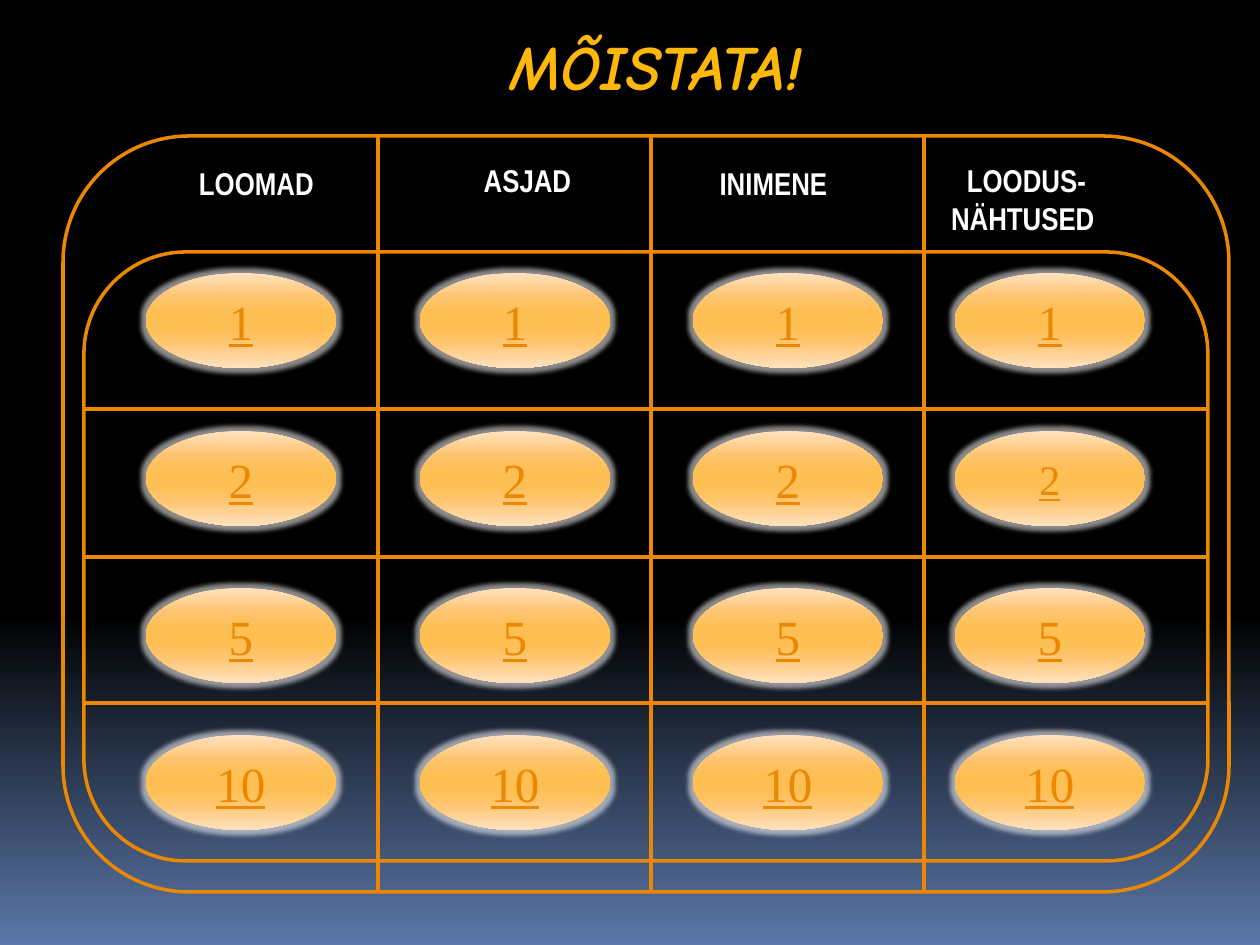
from lxml.etree import SubElement
from pptx import Presentation
from pptx.dml.color import RGBColor
from pptx.enum.shapes import MSO_CONNECTOR, MSO_SHAPE as SHAPE
from pptx.enum.text import MSO_ANCHOR as ANCHOR, PP_ALIGN as ALIGN
from pptx.oxml.ns import qn
from pptx.util import Emu, Pt

PX = 914400 // 126
COLORS = {"orange": "EB8803", "gold": "FEB80A", "white": "FFFFFF"}
SKY = [(0, "000000"), (65, "000000"), (100, "5B77A8")]
SHINE = [(0, "FFE1BF"), (25, "FEC570"), (40, "FEBF55"), (50, "FEBE51"),
         (60, "FEBF55"), (75, "FFC775"), (100, "FFE1BF")]

# Board geometry
OUTER = (63, 136, 1166, 756)
INNER = (84, 252, 1124, 609)
COLUMN_LINES = (378, 651, 924)
ROW_LINES = (409, 557, 703)
BUTTON_LEFTS = (146, 420, 693, 955)
BUTTON_TOPS = (273, 431, 588, 735)
BUTTON_SIZE = (190, 95)
POINTS = ("1", "2", "5", "10")
CATEGORIES = [("LOOMAD ", 158, 158, 204, 50), ("ASJAD ", 422, 155, 218, 50),
              ("INIMENE ", 672, 158, 210, 50),
              ("LOODUS-NÄHTUSED ", 937, 155, 179, 89)]


def px(*values):
    return [Emu(value * PX) for value in values]


def rgb(name):
    return RGBColor.from_string(COLORS[name])


def paint_gradient(fill, element, stops):
    """Fill from top to bottom with any number of colour stops."""
    fill.gradient()
    fill.gradient_angle = 270
    stop_list = next(element.iter(qn("a:gsLst")))
    for old in list(stop_list):
        stop_list.remove(old)
    for percent, color in stops:
        stop = SubElement(stop_list, qn("a:gs"), pos=str(percent * 1000))
        SubElement(stop, qn("a:srgbClr"), val=color)


def add_glow(shape):
    effects = shape._element.spPr.find(qn("a:effectLst"))
    glow = SubElement(effects, qn("a:glow"), rad="70000")
    color = SubElement(glow, qn("a:srgbClr"), val=COLORS["white"])
    SubElement(color, qn("a:alpha"), val="55000")


def write(frame, text, *, font, size, color, wrap=True, anchor=ANCHOR.TOP,
          bold=False, italic=False, underline=False):
    frame.word_wrap = wrap
    frame.vertical_anchor = anchor
    para = frame.paragraphs[0]
    para.alignment = ALIGN.CENTER
    span = para.add_run()
    span.text = text
    span.font.name = font
    span.font.size = Pt(size)
    span.font.color.rgb = rgb(color)
    span.font.bold = bold
    span.font.italic = italic
    span.font.underline = underline


def add_label(page, text, *bounds, **style):
    box = page.shapes.add_textbox(*px(*bounds))
    write(box.text_frame, text, bold=True, **style)


def style_line(line):
    line.color.rgb = rgb("orange")
    line.width = Pt(2)


def add_frame(page, bounds):
    frame = page.shapes.add_shape(SHAPE.ROUNDED_RECTANGLE, *px(*bounds))
    frame.adjustments[0] = 0.167
    frame.shadow.inherit = False
    frame.fill.background()
    style_line(frame.line)


def add_rule(page, *ends):
    rule = page.shapes.add_connector(MSO_CONNECTOR.STRAIGHT, *px(*ends))
    style_line(rule.line)
    SubElement(rule._element.spPr, qn("a:effectLst"))


def add_button(page, text, left, top, size):
    button = page.shapes.add_shape(SHAPE.OVAL, *px(left, top, *BUTTON_SIZE))
    button.shadow.inherit = False
    button.line.fill.background()
    paint_gradient(button.fill, button._element, SHINE)
    add_glow(button)
    write(button.text_frame, text, font="Times New Roman", size=size,
          color="orange", wrap=False, anchor=ANCHOR.MIDDLE, underline=True)


def main():
    deck = Presentation()
    deck.slide_width, deck.slide_height = px(1260, 945)
    page = deck.slides.add_slide(deck.slide_layouts[6])
    paint_gradient(page.background.fill, page._element, SKY)

    # Title
    add_label(page, "MÕISTATA!", 357, 21, 598, 88,
              font="Comic Neue", size=36, color="gold", italic=True)

    # Board frames and dividing lines
    add_frame(page, OUTER)
    add_frame(page, INNER)
    for x in COLUMN_LINES:
        add_rule(page, x, OUTER[1], x, OUTER[1] + OUTER[3])
    for y in ROW_LINES:
        add_rule(page, INNER[0], y, INNER[0] + INNER[2], y)

    # Category headings
    for text, *bounds in CATEGORIES:
        add_label(page, text, *bounds,
                  font="Arial Narrow", size=18, color="white")

    # Point buttons; the last "2" is set smaller
    for column, left in enumerate(BUTTON_LEFTS):
        for row, (top, points) in enumerate(zip(BUTTON_TOPS, POINTS)):
            size = 24 if (column, row) == (3, 1) else 28
            add_button(page, points, left, top, size)

    deck.save("out.pptx")


if __name__ == "__main__":
    main()
